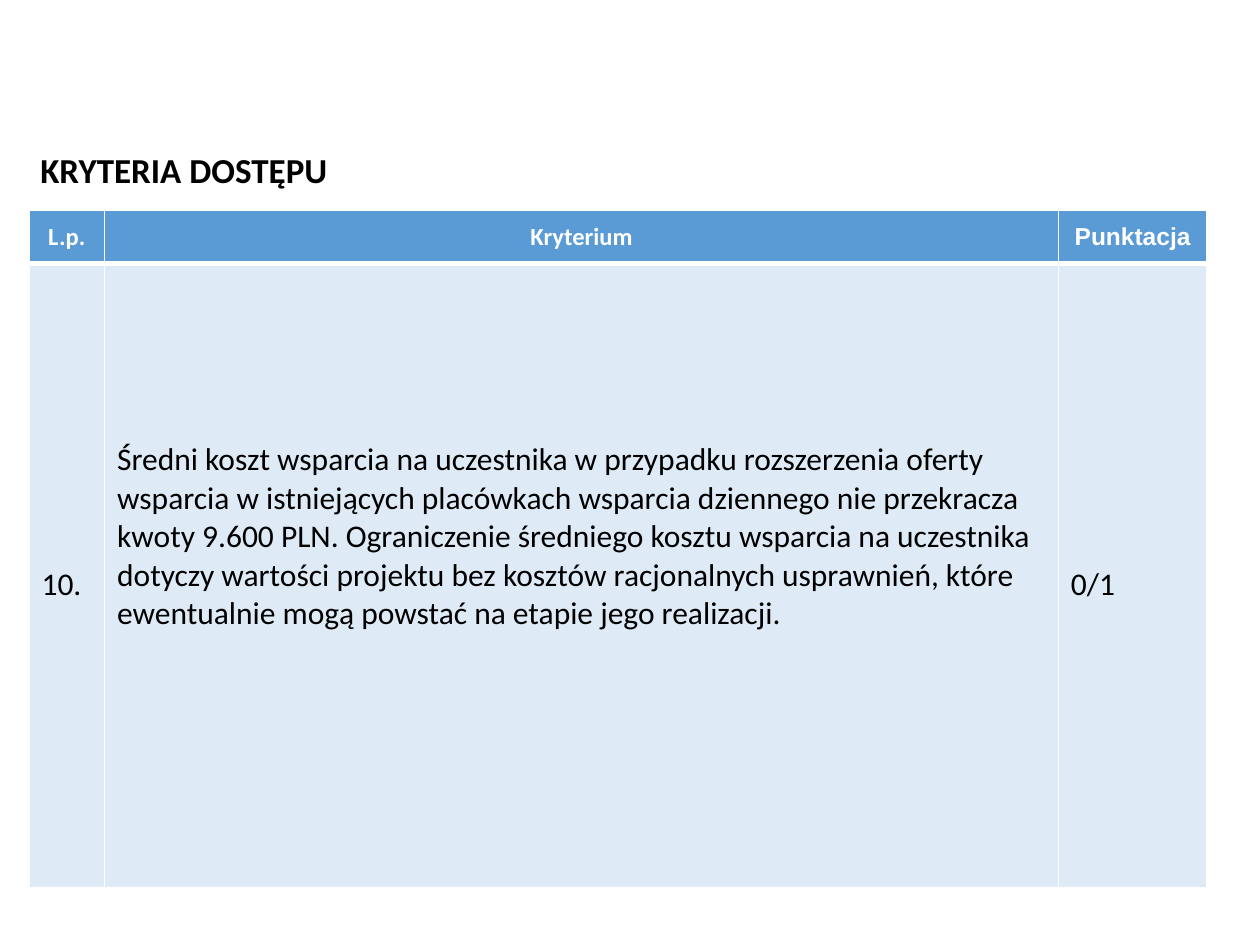
from dataclasses import dataclass

from lxml.etree import SubElement
from pptx import Presentation
from pptx.dml.color import RGBColor
from pptx.enum.text import MSO_ANCHOR as Anchor, MSO_AUTO_SIZE as AutoSize, PP_ALIGN as Align
from pptx.oxml.ns import qn
from pptx.util import Inches, Pt

COLORS = {"header": "5B9BD5", "body": "DEEBF7", "white": "FFFFFF", "black": "000000"}
WIDTH, HEIGHT = Inches(10), Inches(7.5)
COL_SHARES = (0.06, 0.757, 0.118)
ROW_SHARES = (0.056, 0.66)


@dataclass
class CellText:
    text: str
    font: str = "Calibri"
    spacing: float = 1.0
    bottom: float = 0.05


@dataclass
class RowStyle:
    fill: str
    color: str
    size: int
    bold: bool
    align: Align
    top: int
    bottom: int


HEADER = RowStyle("header", "white", 14, True, Align.CENTER, 1, 3)
BODY = RowStyle("body", "black", 18, False, Align.LEFT, 3, 1)

CRITERION = (
    "Średni koszt wsparcia na uczestnika w przypadku rozszerzenia oferty "
    "wsparcia w istniejących placówkach wsparcia dziennego nie przekracza "
    "kwoty 9.600 PLN. Ograniczenie średniego kosztu wsparcia na uczestnika "
    "dotyczy wartości projektu bez kosztów racjonalnych usprawnień, które "
    "ewentualnie mogą powstać na etapie jego realizacji."
)
ROWS = (
    (HEADER, (CellText("L.p."), CellText("Kryterium"), CellText("Punktacja", font="Arial"))),
    (BODY, (CellText("10.", spacing=1.5), CellText(CRITERION, bottom=0.66),
            CellText("0/1", spacing=1.5))),
)


def rgb(name: str) -> RGBColor:
    return RGBColor.from_string(COLORS[name])


def write(tf, text: str, *, font="Calibri", size=18, color="black", bold=False,
          align=Align.LEFT, spacing=1.0) -> None:
    p = tf.paragraphs[0]
    p.alignment, p.line_spacing = align, spacing
    r = p.add_run()
    r.text = text
    r.font.name, r.font.size, r.font.bold = font, Pt(size), bold
    r.font.color.rgb = rgb(color)


def add_borders(cell, top: int, bottom: int) -> None:
    """Draw white cell borders; the side borders are 1 pt wide."""
    tc_pr = cell._tc.get_or_add_tcPr()
    for tag, width in (("lnL", 1), ("lnR", 1), ("lnT", top), ("lnB", bottom)):
        ln = SubElement(tc_pr, qn(f"a:{tag}"), w=str(Pt(width)))
        fill = SubElement(ln, qn("a:solidFill"))
        SubElement(fill, qn("a:srgbClr"), val=COLORS["white"])


def fill_cell(cell, content: CellText, style: RowStyle) -> None:
    add_borders(cell, style.top, style.bottom)
    cell.fill.solid()
    cell.fill.fore_color.rgb = rgb(style.fill)
    cell.vertical_anchor = Anchor.MIDDLE
    cell.margin_bottom = Inches(content.bottom)
    write(cell.text_frame, content.text, font=content.font, size=style.size,
          color=style.color, bold=style.bold, align=style.align, spacing=content.spacing)


def add_title(s, text: str) -> None:
    sp = s.shapes.title
    sp.left, sp.top = int(WIDTH * 0.022), int(HEIGHT * 0.15)
    sp.width, sp.height = int(WIDTH * 0.259), int(HEIGHT * 0.058)
    tf = sp.text_frame
    tf.word_wrap, tf.auto_size = False, AutoSize.SHAPE_TO_FIT_TEXT
    tf.vertical_anchor = Anchor.MIDDLE
    write(tf, text, size=20, bold=True)


def add_criteria_table(s) -> None:
    table = s.shapes.add_table(
        len(ROW_SHARES), len(COL_SHARES), int(WIDTH * 0.023), int(HEIGHT * 0.223),
        int(WIDTH * sum(COL_SHARES)), int(HEIGHT * sum(ROW_SHARES))).table
    for column, share in zip(table.columns, COL_SHARES):
        column.width = int(WIDTH * share)
    for row, share, (style, contents) in zip(table.rows, ROW_SHARES, ROWS):
        row.height = int(HEIGHT * share)
        for cell, content in zip(row.cells, contents):
            fill_cell(cell, content, style)


def main() -> None:
    prs = Presentation()
    prs.slide_width, prs.slide_height = WIDTH, HEIGHT
    s = prs.slides.add_slide(prs.slide_layouts[5])
    add_criteria_table(s)
    add_title(s, "KRYTERIA DOSTĘPU")
    prs.save("out.pptx")


if __name__ == "__main__":
    main()
